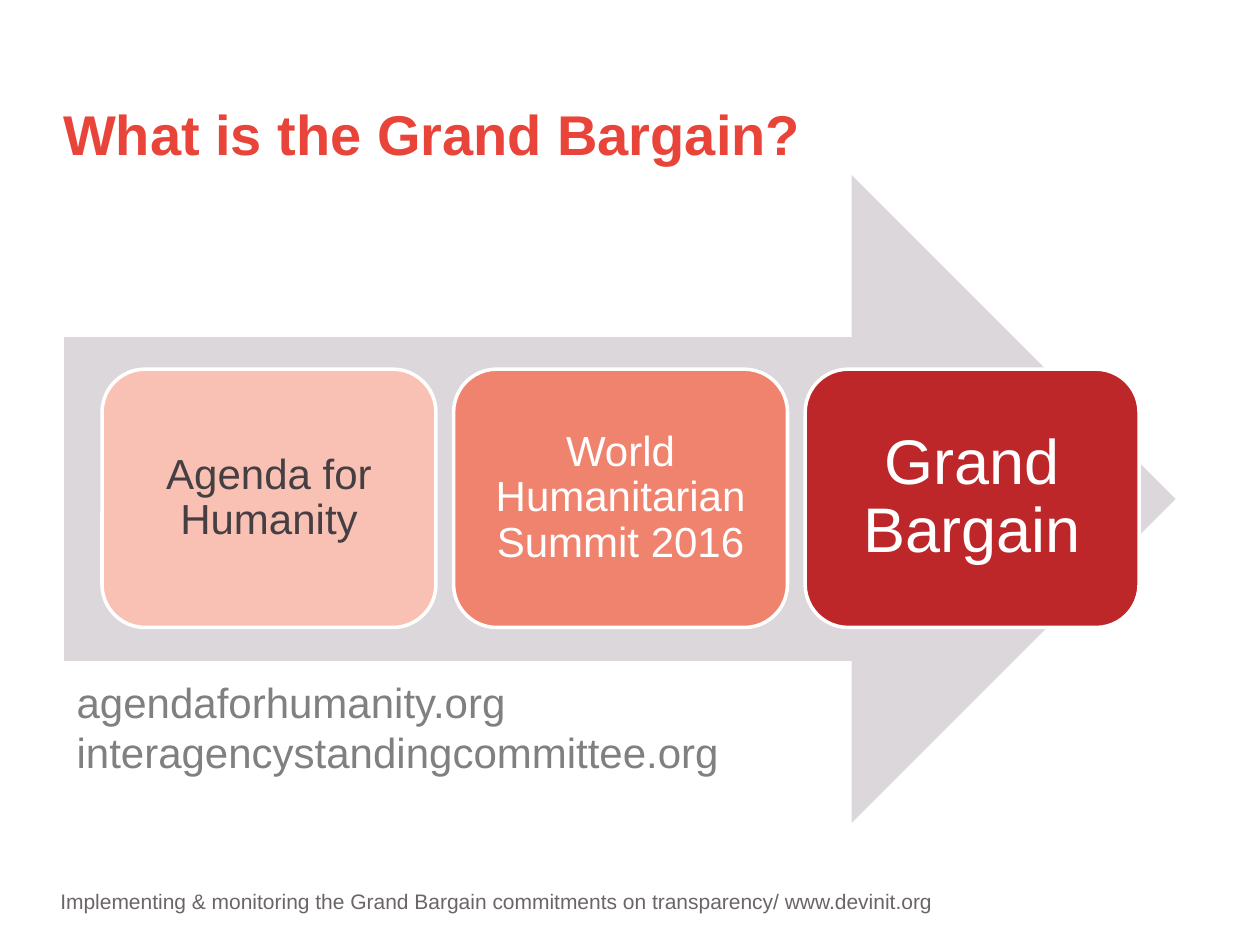
from dataclasses import dataclass

from pptx import Presentation
from pptx.dml.color import RGBColor
from pptx.enum.shapes import MSO_SHAPE as Shape
from pptx.enum.text import MSO_ANCHOR as Anchor, MSO_AUTO_SIZE as AutoSize, PP_ALIGN as Align
from pptx.util import Inches, Pt

FONT = "Arial"
COLORS = {
    "title": "E8443A",
    "arrow": "DBD7DA",
    "agenda": "F8C1B3",
    "summit": "F0836E",
    "bargain": "BD2729",
    "dark": "453F43",
    "white": "FFFFFF",
    "links": "808080",
    "footer": "6B656A",
}

# Row of milestone cards
CARD_LEFT, CARD_TOP = 0.81, 2.93
CARD_WIDTH, CARD_HEIGHT = 2.65, 2.05
CARD_STEP = 2.79
CARD_MARGIN = 0.15


@dataclass(frozen=True)
class Milestone:
    label: str
    fill: str
    color: str
    size: int


@dataclass(frozen=True)
class Note:
    left: float
    top: float
    width: float
    height: float
    lines: tuple[str, ...]
    size: int
    color: str
    anchor: Anchor


MILESTONES = [
    Milestone("Agenda for Humanity", "agenda", "dark", 24),
    Milestone("World Humanitarian Summit 2016", "summit", "white", 24),
    Milestone("Grand Bargain", "bargain", "white", 36),
]
NOTES = [
    Note(0.51, 5.32, 5.91, 0.91,
         ("agendaforhumanity.org", "interagencystandingcommittee.org"),
         24, "links", Anchor.TOP),
    Note(0.38, 6.95, 7.32, 0.4,
         ("Implementing & monitoring the Grand Bargain commitments on transparency/ www.devinit.org",),
         12, "footer", Anchor.MIDDLE),
]


def rgb(name: str) -> RGBColor:
    return RGBColor.from_string(COLORS[name])


def set_margins(frame, margin: float) -> None:
    frame.margin_left = frame.margin_right = Inches(margin)
    frame.margin_top = frame.margin_bottom = Inches(margin)


def add_run(paragraph, text: str, size: int, color: str, bold: bool = False) -> None:
    run = paragraph.add_run()
    run.text = text
    run.font.name = FONT
    run.font.size = Pt(size)
    run.font.bold = bold
    run.font.color.rgb = rgb(color)


def add_filled(slide, kind: Shape, left: float, top: float, width: float, height: float, fill: str):
    shape = slide.shapes.add_shape(kind, Inches(left), Inches(top), Inches(width), Inches(height))
    shape.shadow.inherit = False
    shape.fill.solid()
    shape.fill.fore_color.rgb = rgb(fill)
    shape.line.fill.background()
    return shape


def add_title(slide, text: str) -> None:
    title = slide.shapes.title
    title.left, title.top = Inches(0.5), Inches(0.38)
    title.width, title.height = Inches(8.42), Inches(0.94)
    frame = title.text_frame
    frame.auto_size = AutoSize.NONE
    frame.vertical_anchor = Anchor.BOTTOM
    set_margins(frame, 0)
    paragraph = frame.paragraphs[0]
    paragraph.alignment = Align.LEFT
    add_run(paragraph, text, 32, "title", bold=True)


def add_milestone(slide, index: int, milestone: Milestone) -> None:
    card = add_filled(slide, Shape.ROUNDED_RECTANGLE, CARD_LEFT + index * CARD_STEP, CARD_TOP,
                      CARD_WIDTH, CARD_HEIGHT, milestone.fill)
    card.line.color.rgb = rgb("white")
    card.line.width = Pt(2)
    frame = card.text_frame
    frame.word_wrap = True
    frame.vertical_anchor = Anchor.MIDDLE
    set_margins(frame, CARD_MARGIN)
    paragraph = frame.paragraphs[0]
    paragraph.alignment = Align.CENTER
    paragraph.line_spacing = 0.9
    add_run(paragraph, milestone.label, milestone.size, milestone.color)


def add_note(slide, note: Note) -> None:
    box = slide.shapes.add_textbox(Inches(note.left), Inches(note.top),
                                   Inches(note.width), Inches(note.height))
    frame = box.text_frame
    frame.word_wrap = True
    frame.vertical_anchor = note.anchor
    for index, line in enumerate(note.lines):
        paragraph = frame.add_paragraph() if index else frame.paragraphs[0]
        add_run(paragraph, line, note.size, note.color)


def main() -> None:
    deck = Presentation()
    deck.slide_width, deck.slide_height = Inches(10), Inches(7.5)
    slide = deck.slides.add_slide(deck.slide_layouts[5])

    add_title(slide, "What is the Grand Bargain?")

    # Arrow behind the milestones
    add_filled(slide, Shape.RIGHT_ARROW, 0.51, 1.39, 8.82, 5.14, "arrow")
    for index, milestone in enumerate(MILESTONES):
        add_milestone(slide, index, milestone)

    # Web addresses and footer
    for note in NOTES:
        add_note(slide, note)

    deck.save("out.pptx")


if __name__ == "__main__":
    main()
